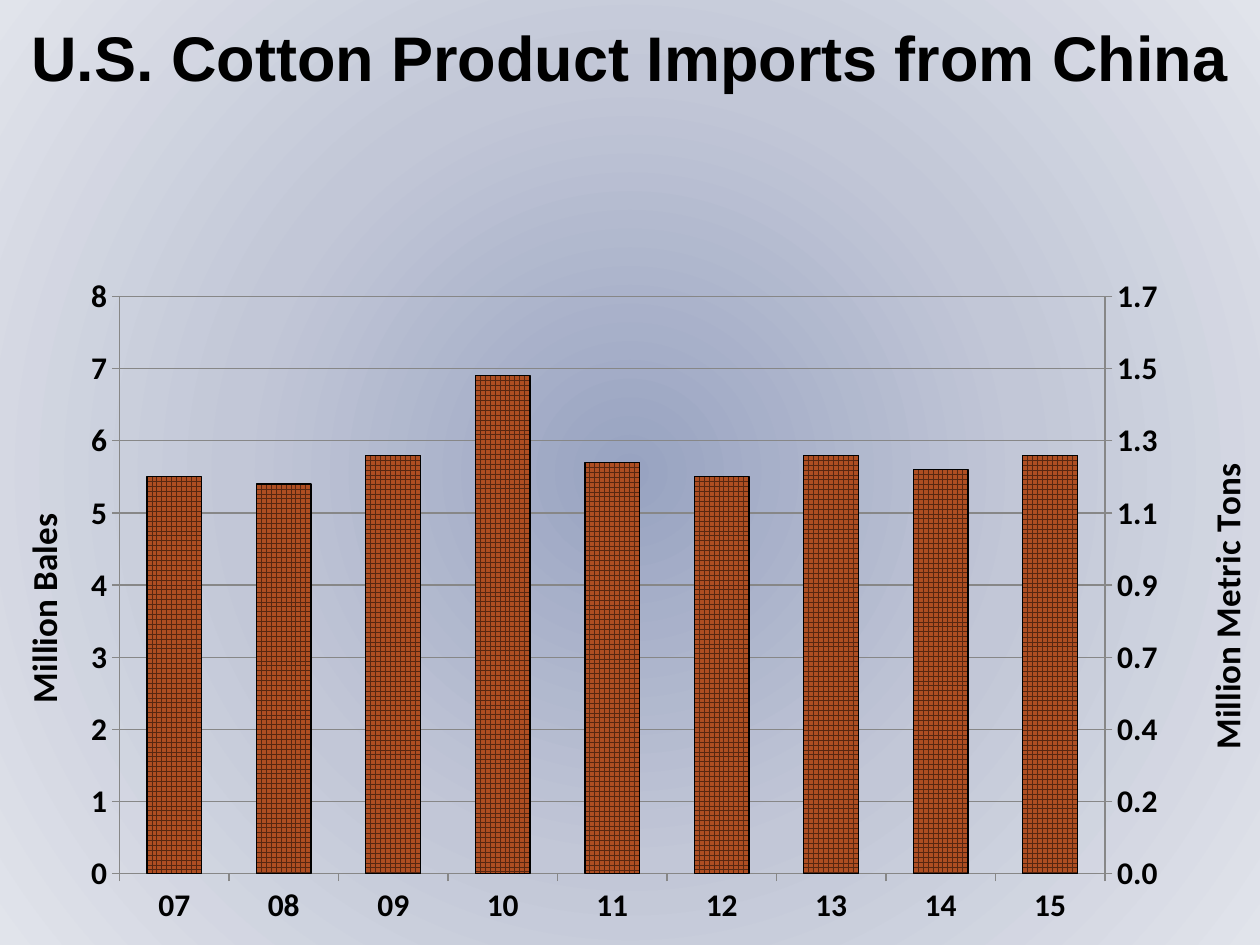
from copy import deepcopy

from pptx import Presentation
from pptx import util as u
from pptx.chart import axis, data
from pptx.dml.color import RGBColor
from pptx.enum import chart as ch
from pptx.enum import dml, text
from pptx.oxml import parse_xml
from pptx.oxml.ns import nsdecls, qn

BLACK = RGBColor(0x00, 0x00, 0x00)
GRAY = RGBColor(0x87, 0x87, 0x87)
RUST = RGBColor(0xAE, 0x4E, 0x22)
BROWN = RGBColor(0x57, 0x27, 0x11)
BACKDROP = {0: RGBColor(0x98, 0xA3, 0xC1), 50: RGBColor(0xC2, 0xC7, 0xD7),
            100: RGBColor(0xE1, 0xE4, 0xEB)}

YEARS = ["07", "08", "09", "10", "11", "12", "13", "14", "15"]
BALES = [5.5, 5.4, 5.8, 6.9, 5.7, 5.5, 5.8, 5.6, 5.8]
TONS = [1.2, 1.17, 1.26, 1.5, 1.25, 1.21, 1.26, 1.22, 1.26]
TONS_PER_BALE = 0.217865


def layout(**values):
    tags = "".join(f'<c:{k} val="{v}"/>' for k, v in values.items())
    return parse_xml(f'<c:layout {nsdecls("c")}><c:manualLayout>{tags}'
                     '</c:manualLayout></c:layout>')


class Deck:
    def __init__(self, width, height):
        self.prs = Presentation()
        self.prs.slide_width, self.prs.slide_height = u.Inches(width), u.Inches(height)
        self.s = self.prs.slides.add_slide(self.prs.slide_layouts[6])

    def box(self, x, y, w, h):
        pw, ph = self.prs.slide_width, self.prs.slide_height
        return round(x * pw), round(y * ph), round(w * pw), round(h * ph)

    def font(self, font, size, name):
        for key, value in dict(size=u.Pt(size), name=name, bold=True).items():
            setattr(font, key, value)
        font.color.rgb = BLACK

    def background(self, stops):
        self.s.background.fill.gradient()
        grad = self.s.element.find(".//" + qn("a:gradFill"))
        gs = "".join(f'<a:gs pos="{pos * 1000}"><a:srgbClr val="{color}"/></a:gs>'
                     for pos, color in stops.items())
        grad.getparent().replace(grad, parse_xml(
            f'<a:gradFill {nsdecls("a")} rotWithShape="1"><a:gsLst>{gs}</a:gsLst>'
            '<a:path path="circle"><a:fillToRect l="50000" t="50000" r="50000" b="50000"/>'
            '</a:path></a:gradFill>'))

    def title(self, words, *place):
        tf = self.s.shapes.add_textbox(*self.box(*place)).text_frame
        frame = dict(word_wrap=True, vertical_anchor=text.MSO_ANCHOR.MIDDLE,
                     margin_left=0, margin_right=0)
        for key, value in frame.items():
            setattr(tf, key, value)
        p = tf.paragraphs[0]
        p.alignment = text.PP_ALIGN.CENTER
        r = p.add_run()
        r.text = words
        self.font(r.font, 36, "Arial")

    def chart(self, cats, series, *place):
        cd = data.CategoryChartData()
        cd.categories = cats
        for name, values in series.items():
            cd.add_series(name, values)
        chart = self.s.shapes.add_chart(
            ch.XL_CHART_TYPE.COLUMN_CLUSTERED, *self.box(*place), cd).chart
        chart.has_title = chart.has_legend = False
        self.font(chart.font, 18, "Calibri")
        plot = chart.plots[0]
        plot.gap_width, plot.vary_by_categories = 100, False
        return chart

    def value_axis(self, ax, words, fmt, top, major, x, y):
        settings = dict(minimum_scale=0, maximum_scale=top, major_unit=major,
                        major_tick_mark=ch.XL_TICK_MARK.OUTSIDE)
        for key, value in settings.items():
            setattr(ax, key, value)
        ax.tick_labels.number_format = fmt
        ax.tick_labels.number_format_is_linked = False
        ax.format.line.color.rgb = GRAY
        tf = ax.axis_title.text_frame
        r = tf.paragraphs[0].add_run()
        r.text = words
        self.font(r.font, 20, "Calibri")
        title = ax.axis_title.element
        body = title.find(".//" + qn("a:bodyPr"))
        body.set("rot", "-5400000")
        body.set("vert", "horz")
        for old in title.findall(qn("c:layout")):
            title.remove(old)
        title.find(qn("c:tx")).addnext(layout(xMode="edge", yMode="edge", x=x, y=y))

    def second_axis(self, chart):
        area = chart.element.find(".//" + qn("c:plotArea"))
        bars, cat, val = (area.find(qn(f"c:{tag}")) for tag in ("barChart", "catAx", "valAx"))
        bars2, cat2, val2 = (deepcopy(el) for el in (bars, cat, val))
        bars.remove(bars.findall(qn("c:ser"))[1])
        bars2.remove(bars2.find(qn("c:ser")))
        ids = {cat.find(qn("c:axId")).get("val"): "50010",
               val.find(qn("c:axId")).get("val"): "50020"}
        for el in (bars2, cat2, val2):
            for ref in el.findall(qn("c:axId")) + el.findall(qn("c:crossAx")):
                ref.set("val", ids[ref.get("val")])
        bars.addnext(bars2)
        val.addnext(val2)
        val2.addnext(cat2)
        val2.find(qn("c:axPos")).set("val", "r")
        val2.find(qn("c:crosses")).set("val", "max")
        axis.CategoryAxis(cat2).visible = False
        return axis.ValueAxis(val2)

    def plot_area(self, chart, x, y, w, h):
        area = chart.element.find(".//" + qn("c:plotArea"))
        for old in area.findall(qn("c:layout")):
            area.remove(old)
        area.insert(0, layout(layoutTarget="inner", xMode="edge", yMode="edge",
                              x=x, y=y, w=w, h=h))


def main():
    deck = Deck(10, 7.5)
    deck.background(BACKDROP)
    deck.title("U.S. Cotton Product Imports from China", 0, 0.01, 1, 0.1)

    chart = deck.chart(YEARS, {"Series 1": BALES, "Series 2": TONS}, 0, 0.24, 1, 0.76)
    bales, tons = chart.plots[0].series
    bales.invert_if_negative = tons.invert_if_negative = False
    fill = bales.format.fill
    fill.patterned()
    fill.pattern = dml.MSO_PATTERN.LARGE_GRID
    fill.fore_color.rgb, fill.back_color.rgb = BROWN, RUST
    bales.format.line.color.rgb = BLACK
    bales.format.line.width = u.Pt(0.75)
    tons.format.fill.background()
    tons.format.line.fill.background()

    years, left = chart.category_axis, chart.value_axis
    years.tick_label_position = ch.XL_TICK_LABEL_POSITION.LOW
    years.major_tick_mark = ch.XL_TICK_MARK.OUTSIDE
    years.format.line.color.rgb = GRAY
    left.has_major_gridlines = False
    right = deck.second_axis(chart)
    left.has_major_gridlines = True
    left.major_gridlines.format.line.color.rgb = GRAY
    deck.value_axis(left, "Million Bales", "#,##0", 8, 1, 0.01, 0.39)
    deck.value_axis(right, "Million Metric Tons", "#,##0.0",
                    8 * TONS_PER_BALE, TONS_PER_BALE, 0.95, 0.32)
    deck.plot_area(chart, 0.095, 0.097, 0.783, 0.804)
    deck.prs.save("out.pptx")


if __name__ == "__main__":
    main()
